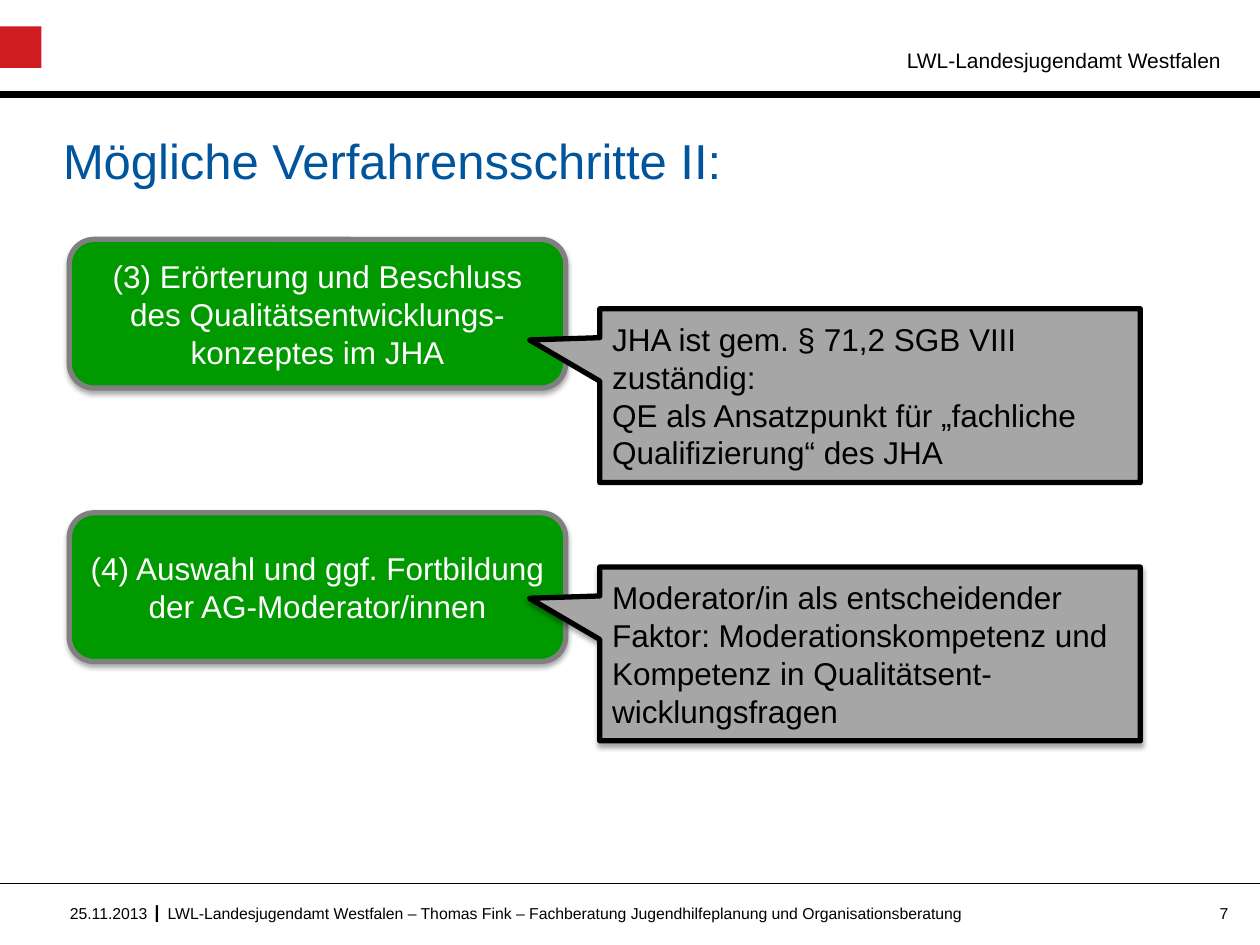
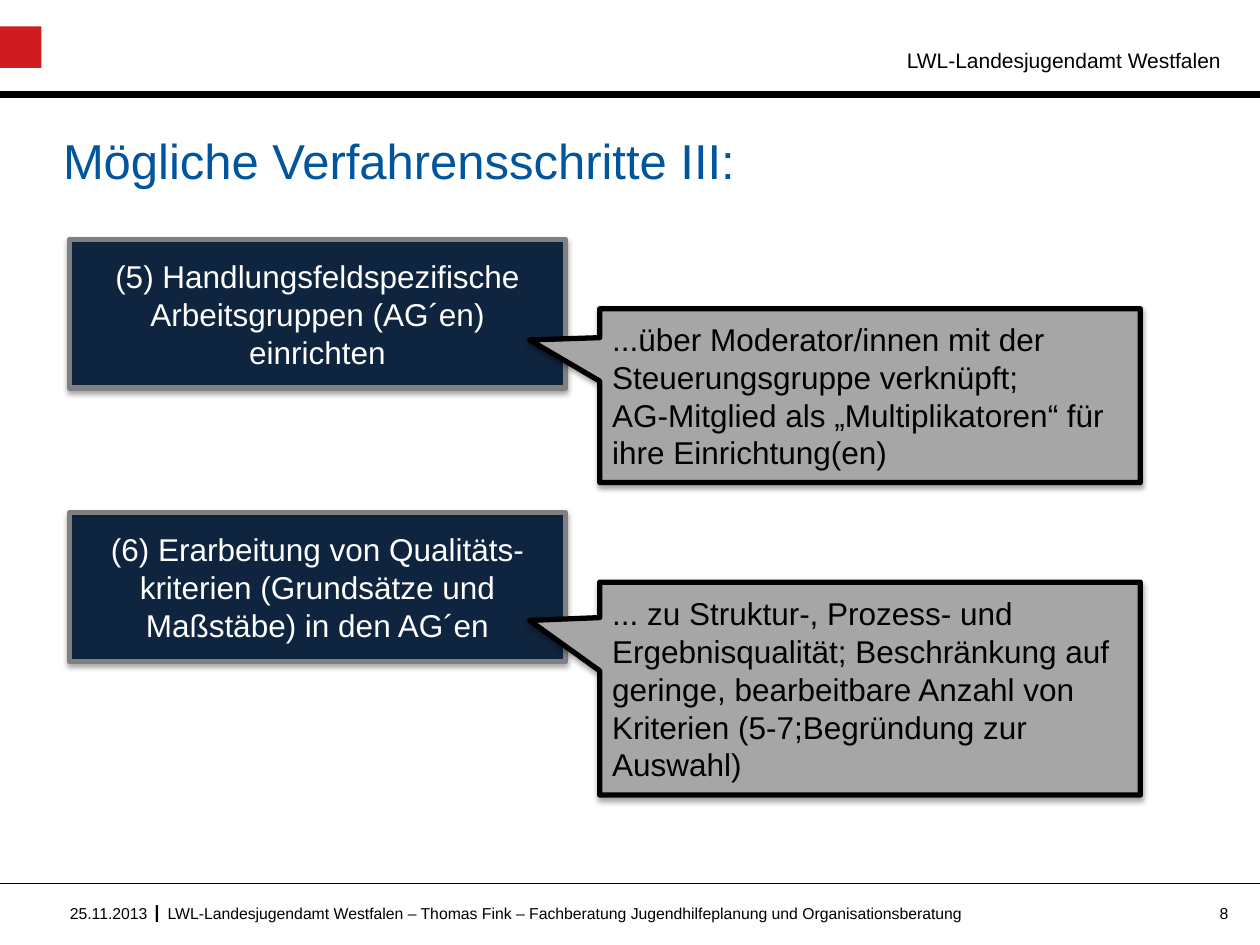
from dataclasses import dataclass

from lxml.etree import SubElement
from pptx import Presentation
from pptx.dml.color import RGBColor as RGB
from pptx.enum.shapes import MSO_CONNECTOR as Connector, MSO_SHAPE as Shape
from pptx.enum.text import MSO_ANCHOR as Anchor, MSO_AUTO_SIZE as AutoSize, PP_ALIGN as Align
from pptx.oxml.ns import qn
from pptx.util import Inches, Pt


@dataclass(frozen=True)
class Theme:
    """Colours, font and type sizes shared by the slides."""
    font: str = "Arial"
    black: RGB = RGB(0, 0, 0)
    white: RGB = RGB(255, 255, 255)
    red: RGB = RGB(0xCF, 0x1C, 0x21)
    title_blue: RGB = RGB(0x00, 0x55, 0x9D)
    green: RGB = RGB(0x00, 0x99, 0x00)
    navy: RGB = RGB(0x0F, 0x24, 0x3E)
    border_grey: RGB = RGB(0x80, 0x80, 0x80)
    note_grey: RGB = RGB(0xA6, 0xA6, 0xA6)
    title_size: int = 28
    body_size: int = 18
    separator_size: int = 14
    header_size: int = 12
    footer_size: int = 9


THEME = Theme()
SLIDE_WIDTH, SLIDE_HEIGHT = 10, 7.5
DEPARTMENT = "LWL-Landesjugendamt Westfalen"
DATE = "25.11.2013"
FOOTER = f"{DEPARTMENT} – Thomas Fink – Fachberatung Jugendhilfeplanung und Organisationsberatung"
STEP_LEFT, STEP_WIDTH, STEP_HEIGHT = 0.55, 3.94, 1.18
NOTE_LEFT, NOTE_WIDTH = 4.76, 4.29
STEP_TOPS = (1.9, 4.07)


def inches(box):
    """Turn a box of numbers into lengths."""
    return [Inches(length) for length in box]


def write(frame, paragraphs, size, color, align=Align.LEFT):
    """Fill a text frame with evenly formatted paragraphs."""
    frame.word_wrap = True
    frame.text = "\n".join(paragraphs)
    for paragraph in frame.paragraphs:
        paragraph.alignment = align
        paragraph.font.name = THEME.font
        paragraph.font.size = Pt(size)
        paragraph.font.color.rgb = color


def clear_margins(frame):
    """Remove the inner margins of a text frame."""
    frame.margin_left = frame.margin_right = frame.margin_top = frame.margin_bottom = 0


def add_label(slide, box, text, size, align=Align.LEFT, margins=False, grow=False):
    """Add a one-paragraph black text box."""
    frame = slide.shapes.add_textbox(*inches(box)).text_frame
    write(frame, [text], size, THEME.black, align)
    if not margins:
        clear_margins(frame)
    if grow:
        frame.auto_size = AutoSize.SHAPE_TO_FIT_TEXT


def add_rule(slide, top, weight):
    """Draw a black line across the slide."""
    rule = slide.shapes.add_connector(
        Connector.STRAIGHT, *inches((0, top, SLIDE_WIDTH, top)))
    rule.line.color.rgb = THEME.black
    rule.line.width = Pt(weight)
    SubElement(rule.element.spPr, qn("a:effectLst"))


def add_header(slide):
    """Add the red square, department name and heavy rule."""
    add_rule(slide, 0.75, 4)
    square = slide.shapes.add_shape(Shape.RECTANGLE, *inches((0, 0.21, 0.33, 0.33)))
    square.shadow.inherit = False
    square.fill.solid()
    square.fill.fore_color.rgb = THEME.red
    square.line.fill.background()
    add_label(slide, (5, 0.33, 4.79, 0.3), DEPARTMENT, THEME.header_size,
              Align.RIGHT, margins=True, grow=True)


def add_footer(slide, number):
    """Add the thin rule, date, author line and slide number."""
    top, height = 7.17, 0.22
    add_rule(slide, 7.01, 0.5)
    add_label(slide, (1.22, 7.13, 0.11, 0.24), "I", THEME.separator_size, grow=True)
    add_label(slide, (9.25, top, 0.5, height), str(number), THEME.footer_size, Align.RIGHT)
    add_label(slide, (0.42, top, 0.75, height), DATE, THEME.footer_size, Align.RIGHT)
    add_label(slide, (1.33, top, 7.25, height), FOOTER, THEME.footer_size)


def add_title(slide, text):
    """Place and format the title placeholder."""
    title = slide.shapes.title
    title.left, title.top, title.width, title.height = inches((0.5, 1.06, 9.2, 1.02))
    frame = title.text_frame
    write(frame, [text], THEME.title_size, THEME.title_blue)
    clear_margins(frame)
    frame.vertical_anchor = Anchor.TOP
    frame.paragraphs[0].line_spacing = Pt(32)


def add_shadow(shape):
    """Give a shape a soft shadow straight below it."""
    effects = shape.element.spPr.find(qn("a:effectLst"))
    shadow = SubElement(effects, qn("a:outerShdw"), blurRad=str(Pt(3.1)),
                        dist=str(Pt(1.8)), dir="5400000", rotWithShape="0")
    color = SubElement(shadow, qn("a:srgbClr"), val=str(THEME.black))
    SubElement(color, qn("a:alpha"), val="35000")


def add_panel(group, kind, box, fill, border, shadow=True):
    """Add a bordered panel to a group."""
    panel = group.shapes.add_shape(kind, *inches(box))
    panel.shadow.inherit = False
    panel.fill.solid()
    panel.fill.fore_color.rgb = fill
    panel.line.color.rgb = border
    panel.line.width = Pt(3)
    panel.text_frame.vertical_anchor = Anchor.MIDDLE
    if shadow:
        add_shadow(panel)
    return panel


def add_step(slide, top, kind, fill, step, note, note_drop, note_height, note_shadow=True):
    """Add a procedure step and the callout explaining it."""
    group = slide.shapes.add_group_shape()
    step_panel = add_panel(group, kind, (STEP_LEFT, top, STEP_WIDTH, STEP_HEIGHT),
                           fill, THEME.border_grey)
    write(step_panel.text_frame, [step], THEME.body_size, THEME.white, Align.CENTER)
    callout = add_panel(group, Shape.RECTANGULAR_CALLOUT,
                        (NOTE_LEFT, top + note_drop, NOTE_WIDTH, note_height),
                        THEME.note_grey, THEME.black, note_shadow)
    callout.adjustments[0] = -0.63
    callout.adjustments[1] = -0.32
    write(callout.text_frame, note, THEME.body_size, THEME.black)


def add_steps_slide(prs, number, title, kind, fill, steps):
    """Build one slide of procedure steps."""
    slide = prs.slides.add_slide(prs.slide_layouts[5])
    add_header(slide)
    add_footer(slide, number)
    add_title(slide, title)
    for top, step in zip(STEP_TOPS, steps):
        add_step(slide, top, kind, fill, **step)


def main():
    """Build and save the presentation."""
    prs = Presentation()
    prs.slide_width, prs.slide_height = inches((SLIDE_WIDTH, SLIDE_HEIGHT))
    add_steps_slide(prs, 7, "Mögliche Verfahrensschritte II:", Shape.ROUNDED_RECTANGLE, THEME.green, [
        dict(step="(3) Erörterung und Beschluss des Qualitätsentwicklungs-konzeptes im JHA",
             note=["JHA ist gem. § 71,2 SGB VIII zuständig:",
                   "QE als Ansatzpunkt für „fachliche Qualifizierung“ des JHA"],
             note_drop=0.55, note_height=1.38, note_shadow=False),
        dict(step="(4) Auswahl und ggf. Fortbildung der AG-Moderator/innen",
             note=["Moderator/in als entscheidender Faktor: Moderationskompetenz und "
                   "Kompetenz in Qualitätsent-wicklungsfragen"],
             note_drop=0.43, note_height=1.38),
    ])
    add_steps_slide(prs, 8, "Mögliche Verfahrensschritte III:", Shape.RECTANGLE, THEME.navy, [
        dict(step="(5) Handlungsfeldspezifische Arbeitsgruppen (AG´en) einrichten",
             note=["...über Moderator/innen mit der Steuerungsgruppe verknüpft;",
                   "AG-Mitglied als „Multiplikatoren“ für ihre Einrichtung(en)"],
             note_drop=0.55, note_height=1.38),
        dict(step="(6) Erarbeitung von Qualitäts-kriterien (Grundsätze und Maßstäbe) in den AG´en",
             note=["... zu Struktur-, Prozess- und Ergebnisqualität; Beschränkung auf geringe, "
                   "bearbeitbare Anzahl von Kriterien (5-7;Begründung zur Auswahl)"],
             note_drop=0.55, note_height=1.69),
    ])
    prs.save("out.pptx")


if __name__ == "__main__":
    main()
